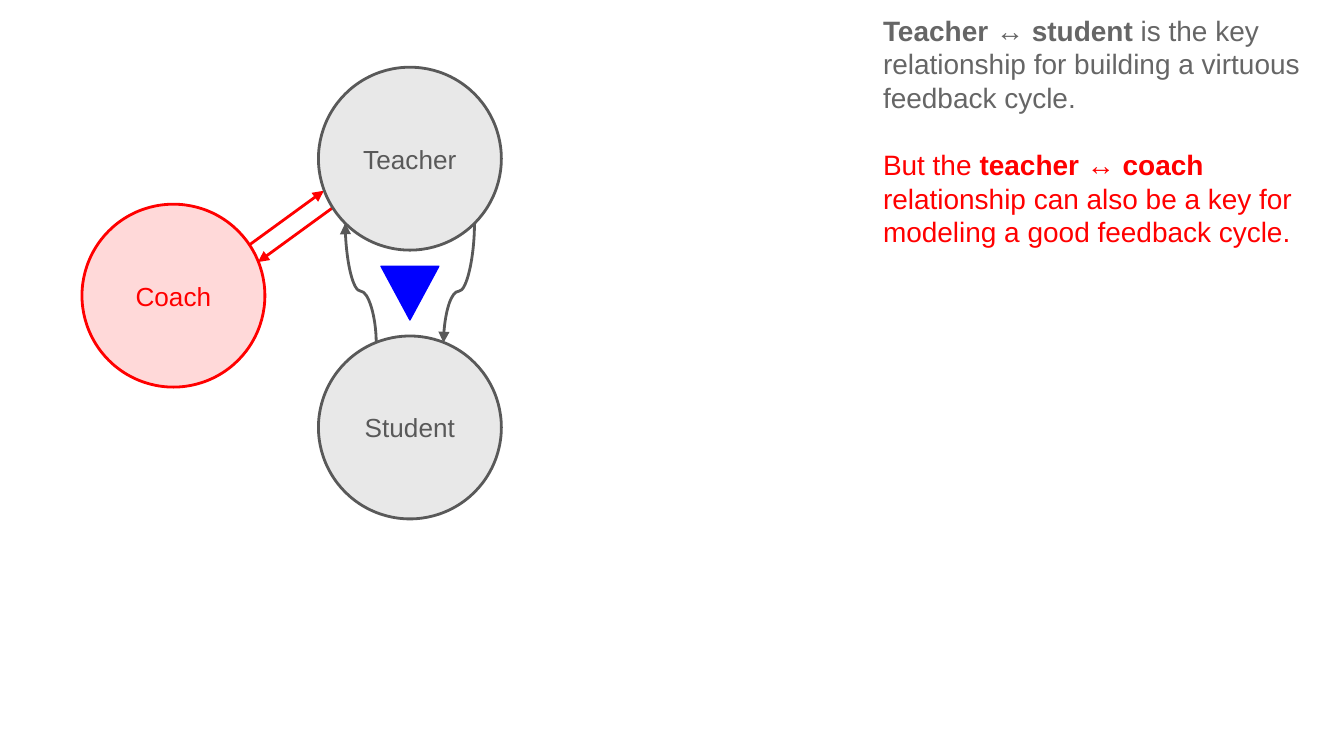
from lxml.etree import SubElement
from pptx import Presentation
from pptx.dml.color import RGBColor
from pptx.enum.shapes import MSO_CONNECTOR as CONN, MSO_SHAPE as SHAPE
from pptx.enum.text import MSO_ANCHOR as ANCHOR, PP_ALIGN as ALIGN
from pptx.oxml.ns import qn
from pptx.util import Pt

FONT = "Arial"
RED, GRAY, DARK, BLUE = "FF0000", "666666", "595959", "0000FF"
DIAMETER = 98


def paint(color, value):
    color.rgb = RGBColor.from_string(value)


def fill_and_outline(sp, fill, line, width):
    sp.shadow.inherit = False
    sp.fill.solid()
    paint(sp.fill.fore_color, fill)
    paint(sp.line.color, line)
    sp.line.width = Pt(width)


def set_insets(tf, inset=7.2):
    tf.margin_left = tf.margin_right = tf.margin_top = tf.margin_bottom = Pt(inset)
    tf.word_wrap = True


def add_role(slide, x, y, name, fill, color):
    """Draw a labelled circle with a 15 % opaque fill."""
    sp = slide.shapes.add_shape(SHAPE.OVAL, Pt(x), Pt(y), Pt(DIAMETER), Pt(DIAMETER))
    fill_and_outline(sp, fill, color, 1.5)
    rgb = sp._element.spPr.find(qn("a:solidFill"))[0]
    SubElement(rgb, qn("a:alpha"), val="15000")
    tf = sp.text_frame
    set_insets(tf)
    tf.vertical_anchor = ANCHOR.MIDDLE
    p = tf.paragraphs[0]
    p.text, p.alignment = name, ALIGN.CENTER
    p.font.name, p.font.size = FONT, Pt(14)
    paint(p.font.color, color)


def add_arrow(slide, kind, x1, y1, x2, y2, color, end="tailEnd"):
    cxn = slide.shapes.add_connector(kind, Pt(x1), Pt(y1), Pt(x2), Pt(y2))
    paint(cxn.line.color, color)
    cxn.line.width = Pt(1.5)
    SubElement(cxn.line._get_or_add_ln(), qn("a:" + end), type="triangle")
    SubElement(cxn._element.spPr, qn("a:effectLst"))
    return cxn


def add_loop(slide, cx, cy, rotation, end):
    """Draw a vertical S-curve, made by turning a horizontal one about its centre."""
    w, h = 64.1, 16.6
    x, y = cx - w / 2, cy - h / 2
    x1, x2 = (x, x + w) if rotation == 270 else (x + w, x)
    cxn = add_arrow(slide, CONN.CURVE, x1, y, x2, y + h, DARK, end)
    spPr = cxn._element.spPr
    spPr.find(qn("a:xfrm")).set("rot", str(rotation * 60000))
    guides = spPr.find(qn("a:prstGeom")).find(qn("a:avLst"))
    SubElement(guides, qn("a:gd"), name="adj1", fmla="val 43200")


def add_diagram(slide, x, y):
    column = x + 126.7
    axis = column + DIAMETER / 2
    add_arrow(slide, CONN.STRAIGHT, x + 133.9, y + 75.6, x + 94.3, y + 104.4, RED)
    add_arrow(slide, CONN.STRAIGHT, x + 90, y + 95, x + 129.6, y + 66.2, RED)
    add_role(slide, x, y + 73.4, "Coach", RED, RED)
    add_role(slide, column, y + 144, "Student", GRAY, DARK)
    add_role(slide, column, y, "Teacher", GRAY, DARK)

    add_loop(slide, axis + 26.3, y + 115.6, 270, "headEnd")
    w, h = 31, 28.8
    sp = slide.shapes.add_shape(SHAPE.ISOSCELES_TRIANGLE, Pt(axis - w / 2),
                                Pt(y + 106.6), Pt(w), Pt(h))
    sp.rotation = 180
    fill_and_outline(sp, BLUE, BLUE, 0.75)
    add_loop(slide, axis - 26.3, y + 115.6, 90, "tailEnd")


def add_commentary(slide, x, y, w, h):
    paragraphs = [
        (GRAY, [("Teacher ↔︎ student", True),
                (" is the key relationship for building a virtuous feedback cycle.", False)]),
        (RED, [("But the ", False), ("teacher ↔︎ coach", True),
               (" relationship can also be a key for modeling a good feedback cycle.", False)]),
    ]
    tf = slide.shapes.add_textbox(Pt(x), Pt(y), Pt(w), Pt(h)).text_frame
    set_insets(tf)
    for i, (color, runs) in enumerate(paragraphs):
        p = tf.add_paragraph() if i else tf.paragraphs[0]
        p.space_before = Pt(18 * i)
        p.font.name, p.font.size = FONT, Pt(15)
        paint(p.font.color, color)
        for text, bold in runs:
            r = p.add_run()
            r.text, r.font.bold = text, bold


def main():
    prs = Presentation()
    prs.slide_width, prs.slide_height = Pt(720), Pt(405)
    slide = prs.slides.add_slide(prs.slide_layouts[6])
    add_commentary(slide, 466, 0, 252, 405)
    add_diagram(slide, 43.9, 36)
    prs.save("out.pptx")


if __name__ == "__main__":
    main()
